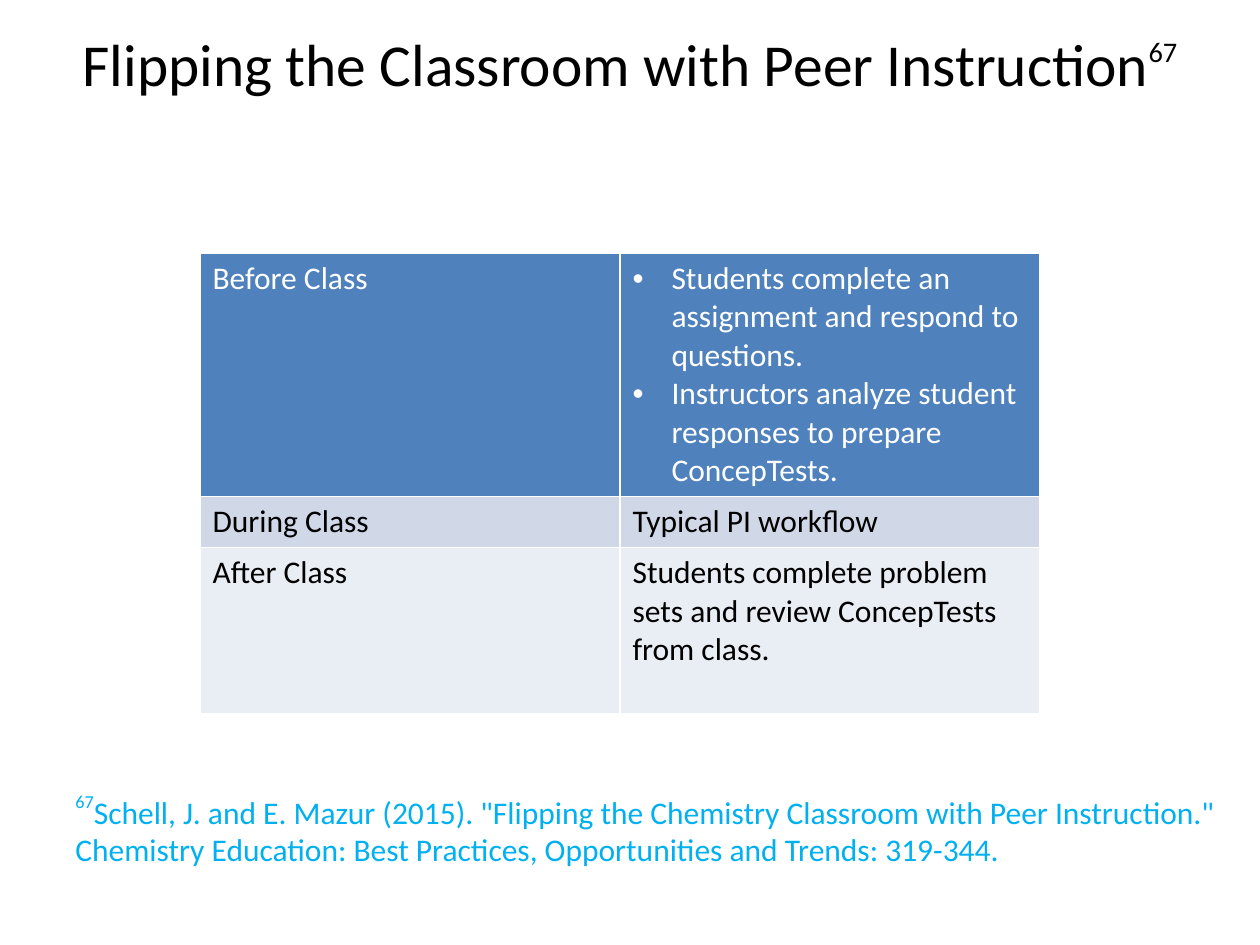
import pptx
import pptx.dml.color
import pptx.enum.text
import pptx.util
from pptx.oxml.xmlchemy import OxmlElement

RGBColor = pptx.dml.color.RGBColor
WHITE = RGBColor(0xFF, 0xFF, 0xFF)
BLACK = RGBColor(0x00, 0x00, 0x00)
HEADER_BLUE = RGBColor(0x4F, 0x81, 0xBD)
BAND_DARK = RGBColor(0xD0, 0xD8, 0xE8)
BAND_LIGHT = RGBColor(0xE9, 0xED, 0xF4)
CITATION_BLUE = RGBColor(0x00, 0xB0, 0xF0)

FONT = "Calibri"
BODY_SIZE = 18
PX = 914400 // 126  # EMU in one px
TITLE_BOX = (63, 21, 1134, 158)
TABLE_BOX = (200, 253, 840, 459)
CITATION_BOX = (63, 784, 1201, 128)
BULLET_INDENT = 39

# Each row: height in px, fill, text colour, label, paragraphs
STAGES = [
    (242, HEADER_BLUE, WHITE, "Before Class", [
        "Students complete an assignment and respond to questions.",
        "Instructors analyze student responses to prepare ConcepTests.",
    ]),
    (51, BAND_DARK, BLACK, "During Class", ["Typical PI workflow"]),
    (166, BAND_LIGHT, BLACK, "After Class", [
        "Students complete problem sets and review ConcepTests from class.",
    ]),
]


def emu(box):
    return [length * PX for length in box]


def style(font, size, color):
    font.name = FONT
    font.size = pptx.util.Pt(size)
    font.color.rgb = color
    font.bold = False


def add_span(para, text, superscript=False):
    span = para.add_run()
    span.text = text
    if superscript:
        span._r.get_or_add_rPr().set("baseline", "50000")
    return span


def add_bullet(para):
    properties = para._p.get_or_add_pPr()
    properties.set("marL", str(BULLET_INDENT * PX))
    properties.set("indent", str(-BULLET_INDENT * PX))
    bullet_font = OxmlElement("a:buFont")
    bullet_font.set("typeface", "Arial")
    bullet = OxmlElement("a:buChar")
    bullet.set("char", "•")
    properties.extend([bullet_font, bullet])


def add_title(page, box):
    title = page.shapes.title
    title.left, title.top, title.width, title.height = emu(box)
    frame = title.text_frame
    frame.auto_size = pptx.enum.text.MSO_AUTO_SIZE.NONE
    frame.vertical_anchor = pptx.enum.text.MSO_ANCHOR.TOP
    para = frame.paragraphs[0]
    para.alignment = pptx.enum.text.PP_ALIGN.CENTER
    add_span(para, "Flipping the Classroom with Peer Instruction")
    note_mark = add_span(para, "67", superscript=True)
    style(para.font, 34, BLACK)
    note_mark.font.size = pptx.util.Pt(28)


def fill_cell(cell, texts, fill, color):
    """Write one paragraph per text, bulleted when there are several."""
    cell.fill.solid()
    cell.fill.fore_color.rgb = fill
    frame = cell.text_frame
    for index, text in enumerate(texts):
        para = frame.add_paragraph() if index else frame.paragraphs[0]
        if len(texts) > 1:
            add_bullet(para)
        add_span(para, text)
        style(para.font, BODY_SIZE, color)


def add_stage_table(page, box):
    table = page.shapes.add_table(len(STAGES), 2, *emu(box)).table
    for row, (height, fill, color, label, texts) in zip(table.rows, STAGES):
        row.height = height * PX
        fill_cell(row.cells[0], [label], fill, color)
        fill_cell(row.cells[1], texts, fill, color)


def add_citation(page, box):
    frame = page.shapes.add_textbox(*emu(box)).text_frame
    frame.word_wrap = True
    source = frame.paragraphs[0]
    add_span(source, "67", superscript=True)
    add_span(source, 'Schell, J. and E. Mazur (2015). "Flipping the Chemistry '
                     'Classroom with Peer Instruction."')
    book = frame.add_paragraph()
    add_span(book, "Chemistry Education: Best Practices, Opportunities and "
                   "Trends: 319-344.")
    for para in frame.paragraphs:
        style(para.font, BODY_SIZE, CITATION_BLUE)


def main():
    deck = pptx.Presentation()
    deck.slide_width = pptx.util.Inches(10)
    deck.slide_height = pptx.util.Inches(7.5)
    page = deck.slides.add_slide(deck.slide_layouts.get_by_name("Title Only"))
    add_title(page, TITLE_BOX)
    add_stage_table(page, TABLE_BOX)
    add_citation(page, CITATION_BOX)
    deck.save("out.pptx")


if __name__ == "__main__":
    main()
